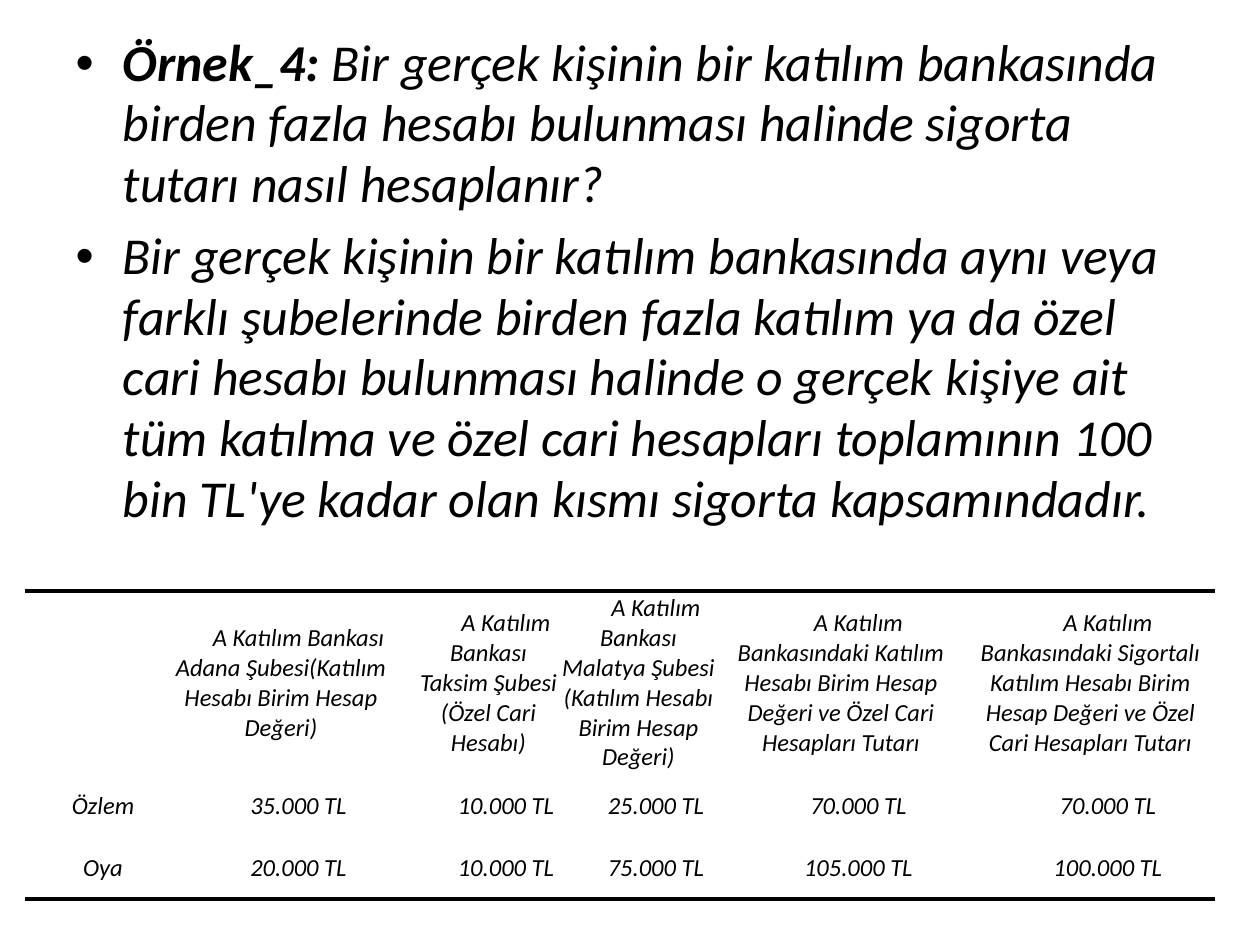
from lxml.etree import SubElement
from pptx import Presentation
from pptx.dml.color import RGBColor
from pptx.enum.text import MSO_ANCHOR, MSO_AUTO_SIZE, PP_ALIGN
from pptx.oxml import parse_xml
from pptx.oxml.ns import nsdecls, qn
from pptx.util import Pt

PX = 914400 / 126
THEME = {"font": "Calibri", "text": "000000", "rule": "000000",
         "body_size": 29.6, "table_size": 14, "rule_width": 2.5}


def px(length):
    return round(length * PX)


def add_text(paragraph, text, size, bold=False, align=None,
             space_after=None, line_spacing=None, first_indent=None):
    run = paragraph.add_run()
    run.text = text
    run.font.name = THEME["font"]
    run.font.size = Pt(size)
    run.font.bold = bold
    run.font.italic = True
    run.font.color.rgb = RGBColor.from_string(THEME["text"])
    if align is not None:
        paragraph.alignment = align
    if space_after is not None:
        paragraph.space_after = Pt(space_after)
    if line_spacing is not None:
        paragraph.line_spacing = line_spacing
    if first_indent is not None:
        properties = paragraph._p.get_or_add_pPr()
        properties.set("marL", "0")
        properties.set("indent", str(px(first_indent)))


presentation = Presentation()
presentation.slide_width = px(1260)
presentation.slide_height = px(945)
slide = presentation.slides.add_slide(presentation.slide_layouts[1])

# The slide has no title
title = slide.shapes.title
title._element.getparent().remove(title._element)

# Question and answer
body = slide.placeholders[1]
body.left, body.top, body.width, body.height = px(63), px(26), px(1134), px(515)
frame = body.text_frame
frame.word_wrap = True
frame.auto_size = MSO_AUTO_SIZE.NONE
frame.vertical_anchor = MSO_ANCHOR.TOP

question = frame.paragraphs[0]
add_text(question, "Örnek_4: ", THEME["body_size"], bold=True)
add_text(question, "Bir gerçek kişinin bir katılım bankasında birden fazla hesabı "
         "bulunması halinde sigorta tutarı nasıl hesaplanır?",
         THEME["body_size"], line_spacing=0.98)
add_text(frame.add_paragraph(),
         "Bir gerçek kişinin bir katılım bankasında aynı veya farklı şubelerinde "
         "birden fazla katılım ya da özel cari hesabı bulunması halinde o gerçek "
         "kişiye ait tüm katılma ve özel cari hesapları toplamının 100 bin TL'ye "
         "kadar olan kısmı sigorta kapsamındadır.",
         THEME["body_size"], line_spacing=0.98)

# Account table
rows = [
    ["",
     "A Katılım Bankası Adana Şubesi(Katılım Hesabı Birim Hesap Değeri)",
     "A Katılım Bankası Taksim Şubesi (Özel Cari Hesabı)",
     "A Katılım Bankası Malatya Şubesi (Katılım Hesabı Birim Hesap Değeri)",
     "A Katılım Bankasındaki Katılım Hesabı Birim Hesap Değeri ve Özel Cari "
     "Hesapları Tutarı",
     "A Katılım Bankasındaki Sigortalı Katılım Hesabı Birim Hesap Değeri ve "
     "Özel Cari Hesapları Tutarı"],
    ["Özlem", "35.000 TL", "10.000 TL", "25.000 TL", "70.000 TL", "70.000 TL"],
    ["Oya", "20.000 TL", "10.000 TL", "75.000 TL", "105.000 TL", "100.000 TL"],
]
column_widths = [121, 270, 145, 155, 250, 249]
row_heights = [184, 62, 62]
table_frame = slide.shapes.add_table(
    len(rows), len(column_widths), px(25), px(591),
    px(sum(column_widths)), px(sum(row_heights)))
table = table_frame.table
table.first_row = False
table.horz_banding = False
# Built-in style without fills or grid lines
table._tbl.tblPr.find(qn("a:tableStyleId")).text = "{2D5ABB26-0587-4C30-8999-92F81FD0307C}"
for column, width in zip(table.columns, column_widths):
    column.width = px(width)
for row, height in zip(table.rows, row_heights):
    row.height = px(height)

ruled_edges = {0: "lnT", len(rows) - 1: "lnB"}
for row_index, texts in enumerate(rows):
    for column_index, text in enumerate(texts):
        cell = table.cell(row_index, column_index)
        cell.fill.background()
        cell.vertical_anchor = MSO_ANCHOR.MIDDLE
        cell.margin_left = cell.margin_right = 0
        cell.margin_top = cell.margin_bottom = 0
        if text:
            add_text(cell.text_frame.paragraphs[0], text, THEME["table_size"],
                     align=PP_ALIGN.CENTER, space_after=6, first_indent=35)
        # Rules above the first row and below the last
        if row_index in ruled_edges:
            edge = parse_xml(f'<a:{ruled_edges[row_index]} {nsdecls("a")} '
                             f'w="{Pt(THEME["rule_width"])}"/>')
            fill = SubElement(edge, qn("a:solidFill"))
            SubElement(fill, qn("a:srgbClr"), val=THEME["rule"])
            cell._tc.get_or_add_tcPr().insert(0, edge)

presentation.save("out.pptx")
